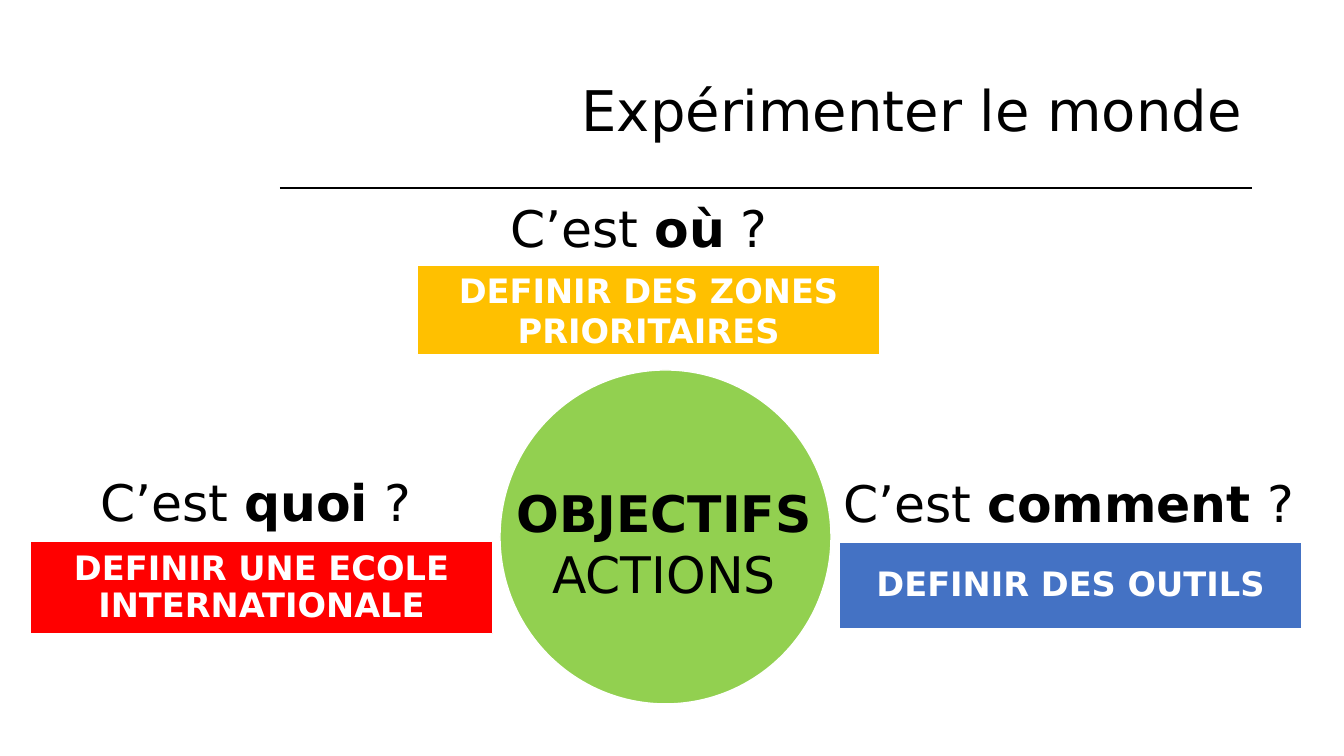
import pptx
import pptx.dml.color
import pptx.enum.shapes
import pptx.enum.text
import pptx.util
from lxml import etree

FONT = "DejaVu Sans"
BLACK, WHITE, GREEN = "000000", "FFFFFF", "92D050"
PX = 914400 / 100.8
ALIGN = pptx.enum.text.PP_ALIGN
ANCHOR = pptx.enum.text.MSO_ANCHOR
SHAPE = pptx.enum.shapes.MSO_SHAPE

TITLE = "Expérimenter le monde"
TITLE_BOX = (280, 40, 972, 146)
RULE_Y = 188
CIRCLE = (500, 370, 331, 334)
CENTRE_BOX = (413, 477, 502, 132)
CENTRE = [[("OBJECTIFS", True)], [("ACTIONS", False)]]

# question word, question box, answer lines, answer box, colour, outline, line spacing
THEMES = [
    ("quoi", (38, 471, 435, 70), ["DEFINIR UNE ECOLE", "INTERNATIONALE"],
     (30, 542, 463, 92), "FF0000", 0.75, 0.9),
    ("où", (212, 197, 854, 70), ["DEFINIR DES ZONES PRIORITAIRES"],
     (417, 265, 463, 90), "FFC000", 1, 1.0),
    ("comment", (819, 472, 499, 70), ["DEFINIR DES OUTILS"],
     (839, 542, 463, 87), "4472C4", 1, 0.9),
]


def px(*lengths):
    return [round(length * PX) for length in lengths]


def rgb(colour):
    return pptx.dml.color.RGBColor.from_string(colour)


def write(frame, paragraphs, size, colour, spacing=1.0, align=ALIGN.CENTER,
          anchor=ANCHOR.MIDDLE):
    """Fill a text frame with paragraphs, each a list of (text, bold) runs."""
    frame.word_wrap = True
    frame.auto_size = pptx.enum.text.MSO_AUTO_SIZE.NONE
    frame.vertical_anchor = anchor
    for index, runs in enumerate(paragraphs):
        paragraph = frame.add_paragraph() if index else frame.paragraphs[0]
        paragraph.alignment = align
        paragraph.line_spacing = spacing
        for text, bold in runs:
            run = paragraph.add_run()
            run.text = text
            run.font.name = FONT
            run.font.size = pptx.util.Pt(size)
            run.font.bold = bold
            run.font.color.rgb = rgb(colour)


def add_block(slide, preset, box, fill, outline):
    block = slide.shapes.add_shape(preset, *px(*box))
    block.shadow.inherit = False
    block.fill.solid()
    block.fill.fore_color.rgb = rgb(fill)
    block.line.color.rgb = rgb(WHITE)
    block.line.width = pptx.util.Pt(outline)
    return block


def add_rule(slide):
    left, _, width, _ = TITLE_BOX
    rule = slide.shapes.add_connector(
        pptx.enum.shapes.MSO_CONNECTOR.STRAIGHT,
        *px(left, RULE_Y, left + width, RULE_Y))
    rule.line.color.rgb = rgb(BLACK)
    rule.line.width = pptx.util.Pt(1.5)
    etree.SubElement(rule._element.spPr, pptx.oxml.ns.qn("a:effectLst"))


def add_question(slide, word, box):
    frame = slide.shapes.add_textbox(*px(*box)).text_frame
    inset = px(7)[0]
    frame.margin_left = frame.margin_right = inset
    frame.margin_top = frame.margin_bottom = inset
    runs = [("C’est ", False), (word, True), (" ?", False)]
    write(frame, [runs], 36, BLACK, 0.9, anchor=ANCHOR.TOP)


def main():
    deck = pptx.Presentation()
    deck.slide_width, deck.slide_height = px(1344, 756)
    slide = deck.slides.add_slide(deck.slide_layouts[5])

    title = slide.shapes.title
    title.left, title.top, title.width, title.height = px(*TITLE_BOX)
    write(title.text_frame, [[(TITLE, False)]], 40, BLACK, 0.9, ALIGN.RIGHT)
    add_rule(slide)

    add_block(slide, SHAPE.OVAL, CIRCLE, GREEN, 1)
    for word, question_box, answer, answer_box, colour, outline, spacing in THEMES:
        add_question(slide, word, question_box)
        block = add_block(slide, SHAPE.RECTANGLE, answer_box, colour, outline)
        write(block.text_frame, [[(line, True)] for line in answer], 24, WHITE, spacing)

    centre = slide.shapes.add_textbox(*px(*CENTRE_BOX))
    write(centre.text_frame, CENTRE, 36, BLACK)
    deck.save("out.pptx")


if __name__ == "__main__":
    main()
